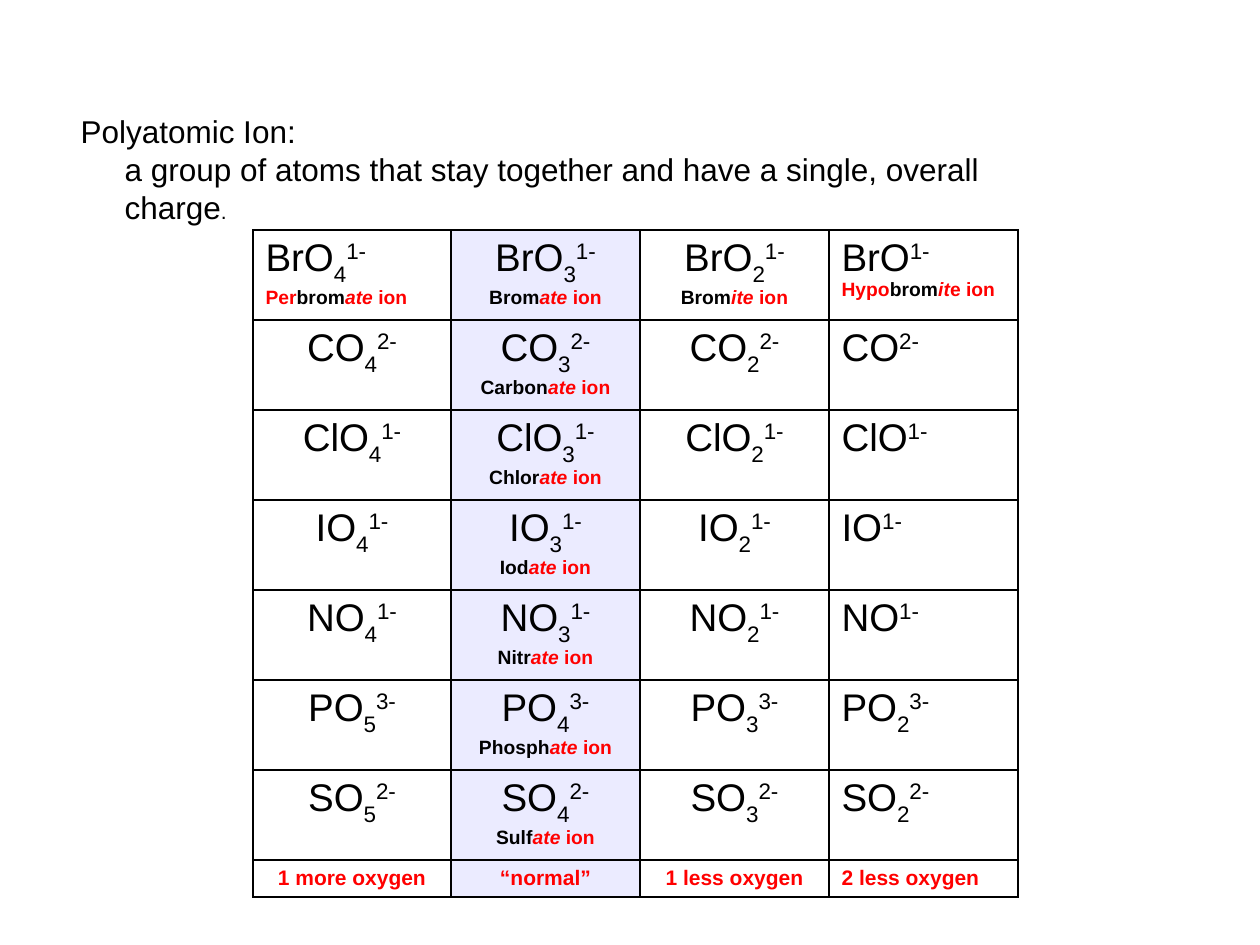
from lxml import etree
from pptx import Presentation
from pptx import util as u
from pptx.dml.color import RGBColor
from pptx.enum import text
from pptx.oxml.ns import qn

BLACK = RGBColor(0x00, 0x00, 0x00)
RED = RGBColor(0xFF, 0x00, 0x00)
LAVENDER = RGBColor(0xEB, 0xEB, 0xFF)

PX_PER_INCH = 126
NORMAL = 1  # column of the usual oxygen count
LAST = 3

# formula stem, charge, oxygen count of the normal ion, name stem
IONS = [
    ("Br", "1-", 3, "Brom"),
    ("C", "2-", 3, "Carbon"),
    ("Cl", "1-", 3, "Chlor"),
    ("I", "1-", 3, "Iod"),
    ("N", "1-", 3, "Nitr"),
    ("P", "3-", 4, "Phosph"),
    ("S", "2-", 4, "Sulf"),
]
FOOTER = ["1 more oxygen", "“normal”", "1 less oxygen", "2 less oxygen"]


def px(length):
    return u.Emu(round(length * 914400 / PX_PER_INCH))


class SlideBuilder:
    font = "Arial"

    def __init__(self, deck):
        self.slide = deck.slides.add_slide(deck.slide_layouts[5])

    def span(self, para, words, size, color=BLACK, bold=False, italic=False, baseline=0):
        """Add a run; baseline is a percentage, negative for subscript."""
        span = para.add_run()
        span.text = words
        font = span.font
        font.name, font.size, font.bold, font.italic = self.font, u.Pt(size), bold, italic
        font.color.rgb = color
        if baseline:
            span._r.get_or_add_rPr().set("baseline", str(baseline * 1000))

    def definition(self, left, top, width, height, term, meaning, indent):
        box = self.slide.shapes.title
        box.left, box.top, box.width, box.height = map(px, (left, top, width, height))
        frame = box.text_frame
        frame.word_wrap = False
        frame.auto_size = text.MSO_AUTO_SIZE.NONE
        frame.vertical_anchor = text.MSO_ANCHOR.TOP
        first, second = frame.paragraphs[0], frame.add_paragraph()
        for para in (first, second):
            para.alignment = text.PP_ALIGN.LEFT
        second._p.get_or_add_pPr().set("marL", str(px(indent)))
        self.span(first, term, 18)
        self.span(second, meaning, 18)
        self.span(second, ".", 12)

    def table(self, left, top, widths, heights):
        frame = self.slide.shapes.add_table(
            len(heights), len(widths), px(left), px(top), px(sum(widths)), px(sum(heights)))
        table = frame.table
        table.first_row = table.horz_banding = False
        for column, width in zip(table.columns, widths):
            column.width = px(width)
        for row, height in zip(table.rows, heights):
            row.height = px(height)
        for row in table.rows:
            for column, cell in enumerate(row.cells):
                self.border(cell)
                if column == NORMAL:
                    cell.fill.solid()
                    cell.fill.fore_color.rgb = LAVENDER
                else:
                    cell.fill.background()
        return table

    def border(self, cell):
        properties = cell._tc.get_or_add_tcPr()
        for side in ("a:lnL", "a:lnR", "a:lnT", "a:lnB"):
            line = etree.SubElement(properties, qn(side), w=str(u.Pt(1)))
            fill = etree.SubElement(line, qn("a:solidFill"))
            etree.SubElement(fill, qn("a:srgbClr"), val=str(BLACK))

    def formula(self, para, element, oxygens, charge):
        self.span(para, element + "O", 22)
        if oxygens > 1:
            self.span(para, str(oxygens), 22, baseline=-30)
        self.span(para, charge, 22, baseline=30)

    def ion_name(self, para, prefix, stem, italic_part, rest):
        for words, color, italic in ((prefix, RED, False), (stem, BLACK, False),
                                     (italic_part, RED, True), (rest, RED, False)):
            if words:
                self.span(para, words, 11, color, bold=True, italic=italic)


def names_for(row, stem):
    """Return the name parts of one row's ions by column."""
    names = {NORMAL: ("", stem, "ate", " ion")}
    if row == 0:
        names[0] = ("Per", stem.lower(), "ate", " ion")
        names[2] = ("", stem, "ite", " ion")
        names[LAST] = ("Hypo", stem.lower(), "it", "e ion")
    return names


def main():
    deck = Presentation()
    deck.slide_width, deck.slide_height = px(1260), px(945)
    page = SlideBuilder(deck)
    page.definition(
        68, 106, 1034, 120, "Polyatomic Ion:",
        "a group of atoms that stay together and have a single, overall charge", indent=44)
    table = page.table(253, 230, [198] + [189] * 3, [90] * len(IONS) + [37])

    for row, (element, charge, normal_count, stem) in enumerate(IONS):
        names = names_for(row, stem)
        for column in range(len(FOOTER)):
            frame = table.cell(row, column).text_frame
            page.formula(frame.paragraphs[0], element, normal_count + NORMAL - column, charge)
            if column in names:
                page.ion_name(frame.add_paragraph(), *names[column])

    for column, label in enumerate(FOOTER):
        para = table.cell(len(IONS), column).text_frame.paragraphs[0]
        page.span(para, label, 12, RED, bold=True)

    for row_index, row in enumerate(table.rows):
        for column, cell in enumerate(row.cells):
            at_left = column == LAST or (row_index, column) == (0, 0)
            for para in cell.text_frame.paragraphs:
                para.alignment = text.PP_ALIGN.LEFT if at_left else text.PP_ALIGN.CENTER

    deck.save("out.pptx")


if __name__ == "__main__":
    main()
